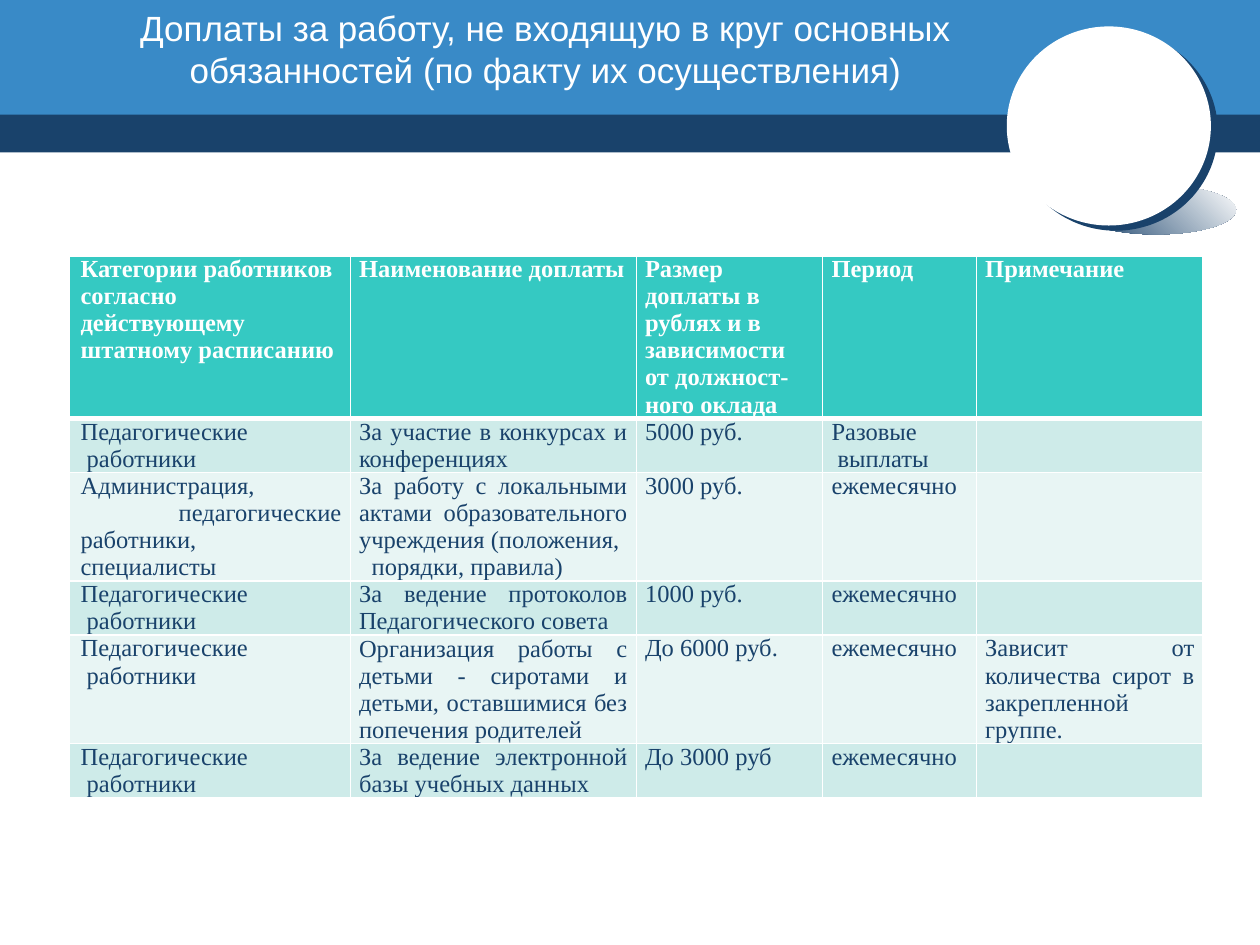
from lxml import etree
from pptx import Presentation
from pptx.dml.color import RGBColor
from pptx.enum.shapes import MSO_SHAPE as SHAPE
from pptx.enum.text import MSO_ANCHOR as ANCHOR, PP_ALIGN as ALIGN
from pptx.oxml.ns import qn
from pptx.util import Inches, Pt

COLORS = {
    "navy": "19426B", "blue": "398AC7", "white": "FFFFFF",
    "header": "35C9C2", "odd": "CEEBE9", "even": "E8F5F4",
}
RGB = {name: RGBColor.from_string(value) for name, value in COLORS.items()}

prs = Presentation()
prs.slide_width, prs.slide_height = Inches(10), Inches(7.5)
slide = prs.slides.add_slide(prs.slide_layouts[6])


def add_plain(kind, left, top, width, height, color):
    """Add a preset shape with a solid fill and neither outline nor shadow."""
    shape = slide.shapes.add_shape(
        kind, Inches(left), Inches(top), Inches(width), Inches(height))
    shape.shadow.inherit = False
    shape.fill.solid()
    shape.fill.fore_color.rgb = RGB[color]
    shape.line.fill.background()
    return shape


def set_border(cell, side, points):
    border = etree.SubElement(
        cell._tc.get_or_add_tcPr(), qn(f"a:{side}"), w=str(Pt(points)))
    fill = etree.SubElement(border, qn("a:solidFill"))
    etree.SubElement(fill, qn("a:srgbClr"), val=COLORS["white"])


# Header bands and the circle with its shadows
add_plain(SHAPE.RECTANGLE, 0, 0.87, 10, 0.34, "navy")
add_plain(SHAPE.RECTANGLE, 0, 0, 10, 0.91, "blue")

floor_shadow = add_plain(SHAPE.OVAL, 8.54, 1.47, 1.27, 0.39, "navy")
floor_shadow.fill.gradient()
floor_shadow.fill.gradient_angle = 45
for stop, color in zip(floor_shadow.fill.gradient_stops, ("navy", "white")):
    stop.color.rgb = RGB[color]

circle = add_plain(SHAPE.OVAL, 7.99, 0.21, 1.62, 1.58, "white")
effects = circle._element.spPr.find(qn("a:effectLst"))
rim = etree.SubElement(effects, qn("a:outerShdw"), blurRad="0",
                       dist=str(Pt(5)), dir=str(37 * 60000), algn="ctr", rotWithShape="0")
etree.SubElement(rim, qn("a:srgbClr"), val=COLORS["navy"])

# Table: a line break in a cell's text starts a new paragraph
STAFF = "Педагогические\n работники"
MONTHLY = "ежемесячно"
ROWS = [
    ["Категории работников \nсогласно действующему\nштатному расписанию ",
     "Наименование доплаты",
     "Размер \nдоплаты в \nрублях и в\nзависимости \nот должност-\nного оклада",
     "Период", "Примечание"],
    [STAFF, "За участие в конкурсах и конференциях", "5000 руб.",
     "Разовые\n выплаты", ""],
    ["Администрация,\n педагогические работники,\nспециалисты",
     "За работу с локальными актами образовательного учреждения (положения,\n"
     "порядки, правила)", "3000 руб.", MONTHLY, ""],
    [STAFF, "За ведение протоколов Педагогического совета ", "1000 руб.", MONTHLY, ""],
    [STAFF, "Организация работы с детьми - сиротами и детьми, оставшимися "
     "без попечения родителей", "До 6000 руб.", MONTHLY,
     "Зависит от количества сирот в закрепленной группе."],
    [STAFF, "За ведение электронной базы учебных данных", "До 3000 руб", MONTHLY, ""],
]
COLUMN_WIDTHS = [2.23, 2.27, 1.48, 1.22, 1.8]
ROW_HEIGHTS = [1.28, 0.43, 0.86, 0.43, 0.86, 0.43]

frame = slide.shapes.add_table(
    len(ROWS), len(COLUMN_WIDTHS), Inches(0.55), Inches(2.03),
    Inches(sum(COLUMN_WIDTHS)), Inches(sum(ROW_HEIGHTS)))
payments = frame.table
for column, width in zip(payments.columns, COLUMN_WIDTHS):
    column.width = Inches(width)
for row, height in zip(payments.rows, ROW_HEIGHTS):
    row.height = Inches(height)

for r, texts in enumerate(ROWS):
    is_header = r == 0
    fill_color = "header" if is_header else ("odd" if r % 2 else "even")
    for c, text in enumerate(texts):
        cell = payments.cell(r, c)
        cell.margin_left = cell.margin_right = Inches(0.07)
        cell.margin_top = cell.margin_bottom = 0
        cell.vertical_anchor = ANCHOR.BOTTOM if c == 1 and 0 < r < 5 else ANCHOR.TOP
        for side in ("lnL", "lnR", "lnT", "lnB"):
            set_border(cell, side, 3 if is_header and side == "lnB" else 1)
        cell.fill.solid()
        cell.fill.fore_color.rgb = RGB[fill_color]
        cell.text_frame.text = text
        for paragraph in cell.text_frame.paragraphs:
            paragraph.alignment = ALIGN.JUSTIFY
            indent = 0.1 if paragraph.text.startswith("порядки") else 0.02 * (c == 0)
            paragraph._p.get_or_add_pPr().set("marL", str(Inches(indent)))
            paragraph.font.size = Pt(14)
            for run in paragraph.runs:
                run.font.name = "Times New Roman"
                run.font.size = Pt(14)
                run.font.bold = is_header
                run.font.color.rgb = RGB["white" if is_header else "navy"]

# Title
title = slide.shapes.add_textbox(Inches(0.43), 0, Inches(7.8), Inches(0.77)).text_frame
title.word_wrap = True
title.vertical_anchor = ANCHOR.TOP
title.text = ("Доплаты за работу, не входящую в круг основных обязанностей "
              "(по факту их осуществления)")
title.paragraphs[0].alignment = ALIGN.CENTER
heading = title.paragraphs[0].runs[0].font
heading.name, heading.size = "Arial", Pt(20)
heading.color.rgb = RGB["white"]

prs.save("out.pptx")
